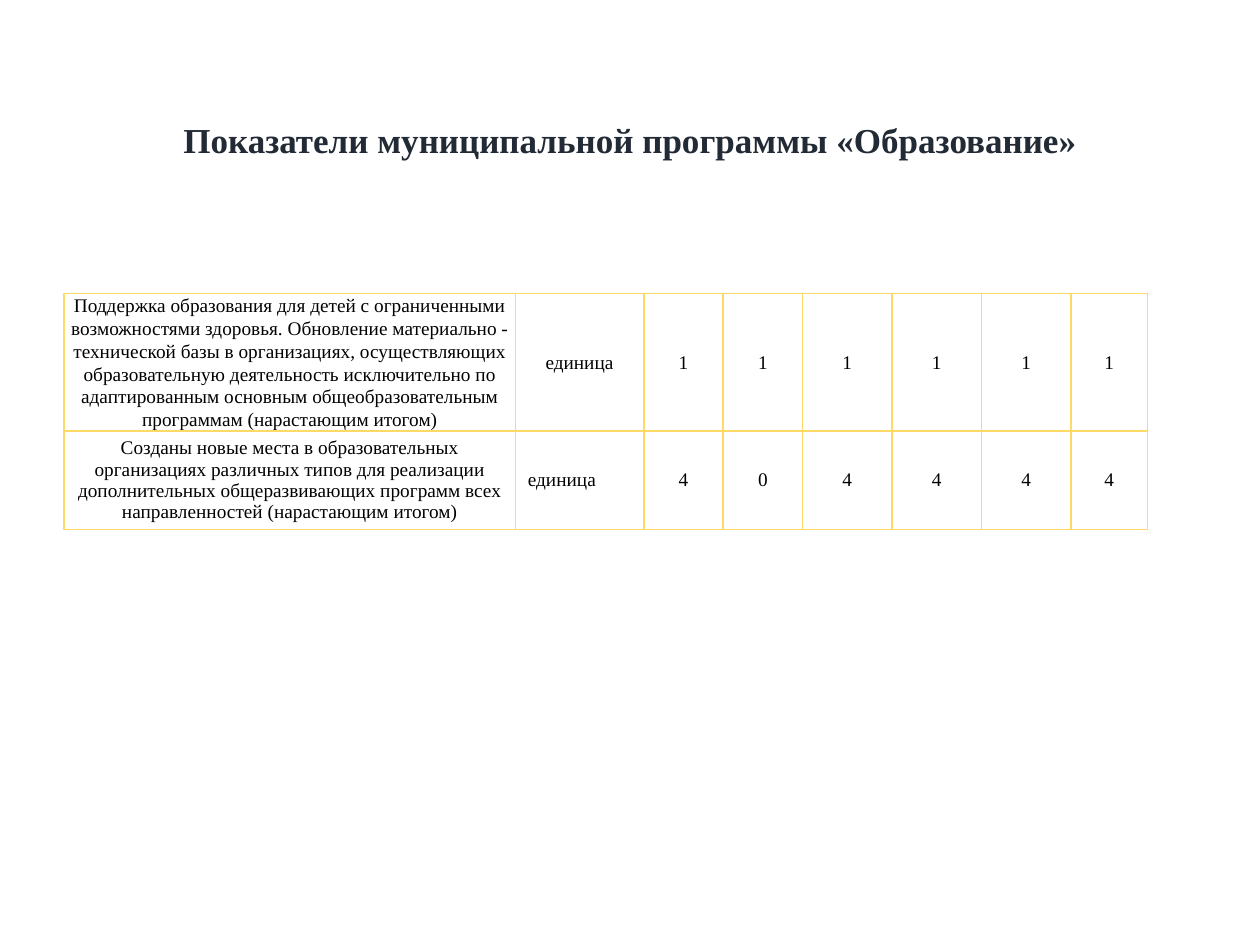
from lxml import etree
from pptx import Presentation
from pptx.dml.color import RGBColor
from pptx.enum import text
from pptx.oxml import ns
from pptx.util import Inches, Pt

COLORS = {"title": "222A35", "text": "000000", "line": "FFD966"}
FONT = "Times New Roman"


def style(run, size, color, bold=False):
    run.font.name = FONT
    run.font.size = Pt(size)
    run.font.bold = bold
    run.font.color.rgb = RGBColor.from_string(COLORS[color])


def border(cell):
    props = cell._tc.get_or_add_tcPr()
    for pos, side in enumerate(("lnL", "lnR", "lnT", "lnB")):
        line = etree.Element(ns.qn(f"a:{side}"), w=str(Pt(1)))
        fill = etree.SubElement(line, ns.qn("a:solidFill"))
        etree.SubElement(fill, ns.qn("a:srgbClr"), val=COLORS["line"])
        props.insert(pos, line)


prs = Presentation()
prs.slide_width, prs.slide_height = Inches(10), Inches(7.5)
slide = prs.slides.add_slide(prs.slide_layouts[5])

# Title
title = slide.shapes.title
title.left, title.top = Inches(0.69), Inches(0.4)
title.width, title.height = Inches(8.62), Inches(1.45)
frame = title.text_frame
frame.text = "Показатели муниципальной программы «Образование»"
frame.vertical_anchor = text.MSO_ANCHOR.MIDDLE
para = frame.paragraphs[0]
para.alignment = text.PP_ALIGN.CENTER
para.line_spacing = 0.9
style(para.runs[0], 20, "title", True)

# Indicator table
rows = [
    ["Поддержка образования для детей с ограниченными возможностями здоровья. "
     "Обновление материально - технической базы в организациях, осуществляющих "
     "образовательную деятельность исключительно по адаптированным основным "
     "общеобразовательным программам (нарастающим итогом)",
     "единица", "1", "1", "1", "1", "1", "1"],
    ["Созданы новые места в образовательных организациях различных типов для "
     "реализации дополнительных общеразвивающих программ всех направленностей "
     "(нарастающим итогом)",
     "единица", "4", "0", "4", "4", "4", "4"],
]
widths = [3.58, 1.02, 0.63, 0.63, 0.71, 0.71, 0.71, 0.61]
holder = slide.shapes.add_table(len(rows), len(widths), Inches(0.51), Inches(2.33),
                                Inches(8.61), Inches(2))
table = holder.table
table.first_row = table.horz_banding = False
for col, width in zip(table.columns, widths):
    col.width = Inches(width)
for row in table.rows:
    row.height = Inches(0.41)
holder.height = Inches(2)

for r, row in enumerate(rows):
    for c, value in enumerate(row):
        cell = table.cell(r, c)
        cell.text = value
        cell.fill.background()
        border(cell)
        para = cell.text_frame.paragraphs[0]
        style(para.runs[0], 11, "text")
        # The second unit cell is left-aligned, its indicator text sits at the top
        if (r, c) != (1, 1):
            para.alignment = text.PP_ALIGN.CENTER
        if (r, c) != (1, 0):
            cell.vertical_anchor = text.MSO_ANCHOR.MIDDLE
        if r == 0:
            para.line_spacing = 1.07
            cell.margin_left = cell.margin_right = Inches(0.02)
            cell.margin_top = cell.margin_bottom = 0

prs.save("out.pptx")
